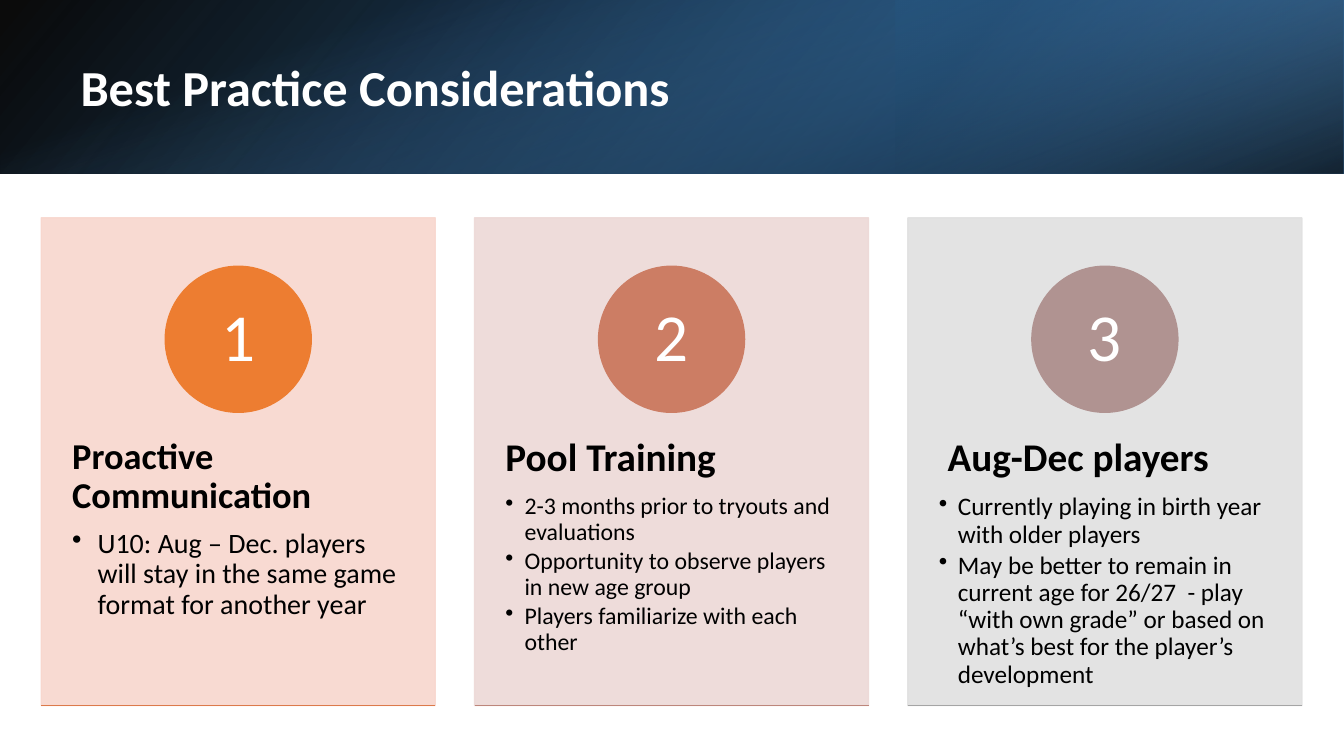
from pptx import Presentation
from pptx.dml.color import RGBColor
from pptx.enum.shapes import MSO_CONNECTOR as Connector, MSO_SHAPE as Shape
from pptx.enum.text import MSO_ANCHOR as Anchor, PP_ALIGN as Align
from pptx.oxml.ns import qn
from pptx.util import Cm, Pt
from lxml.etree import SubElement

WHITE = RGBColor(0xFF, 0xFF, 0xFF)
BLACK = RGBColor(0x00, 0x00, 0x00)
NAVY = RGBColor(0x1F, 0x4E, 0x79)
BLUE = RGBColor(0x2E, 0x75, 0xB6)
SKY = RGBColor(0x5B, 0x9B, 0xD5)
PEACH = RGBColor(0xF8, 0xD7, 0xCE)
ORANGE = RGBColor(0xED, 0x7D, 0x31)
RUST = RGBColor(0xDC, 0x7A, 0x4B)
ROSE = RGBColor(0xED, 0xD9, 0xD7)
CORAL = RGBColor(0xCC, 0x7D, 0x64)
CLAY = RGBColor(0xBD, 0x86, 0x7B)
SILVER = RGBColor(0xE1, 0xE1, 0xE1)
MAUVE = RGBColor(0xB0, 0x93, 0x91)
GRAY = RGBColor(0xA5, 0xA5, 0xA5)

FONT = "Calibri"
SLIDE_W, SLIDE_H = 33.87, 19.05
HEADER_H = 4.37
CARD_LEFT, CARD_TOP, CARD_W, CARD_H = 1.04, 5.49, 9.93, 12.29
CARD_PITCH = 10.92
CIRCLE_TOP, CIRCLE_SIZE = 6.71, 3.68
BODY_TOP, BODY_H = 10.13, 7.37

CARDS = [
    (PEACH, ORANGE, RUST, "Proactive Communication", 26, 20, 0.64, [
        "U10: Aug – Dec. players will stay in the same game format for another year",
    ]),
    (ROSE, CORAL, CLAY, "Pool Training", 28, 17, 0.48, [
        "2-3 months prior to tryouts and evaluations",
        "Opportunity to observe players in new age group",
        "Players familiarize with each other",
    ]),
    (SILVER, MAUVE, GRAY, " Aug-Dec players", 28, 18, 0.48, [
        "Currently playing in birth year with older players",
        "May be better to remain in current age for 26/27  - play “with own grade” "
        "or based on what’s best for the player’s development",
    ]),
]


def set_opacity(shape, opacities):
    colors = shape._element.spPr.iter(qn("a:srgbClr"))
    for color, opacity in zip(list(colors), opacities):
        SubElement(color, qn("a:alpha")).set("val", str(opacity * 1000))


def add_gradient(slide, box, angle, stops, rotation=0, flip=False):
    band = slide.shapes.add_shape(Shape.RECTANGLE, *map(Cm, box))
    band.shadow.inherit = False
    band.line.fill.background()
    band.rotation = rotation
    if flip:
        band._element.spPr.get_or_add_xfrm().set("flipH", "1")
    band.fill.gradient()
    band.fill.gradient_angle = 360 - angle
    for stop, (position, color, _) in zip(band.fill.gradient_stops, stops):
        stop.position = position
        stop.color.rgb = color
    set_opacity(band, [opacity for _, _, opacity in stops])


def add_solid(slide, kind, box, color):
    solid = slide.shapes.add_shape(kind, *map(Cm, box))
    solid.shadow.inherit = False
    solid.fill.solid()
    solid.fill.fore_color.rgb = color
    solid.line.color.rgb = color
    solid.line.width = Pt(1)
    return solid


def add_rule(slide, left, top, width, color):
    rule = slide.shapes.add_connector(
        Connector.STRAIGHT, Cm(left), Cm(top), Cm(left + width), Cm(top))
    rule.line.color.rgb = color
    rule.line.width = Pt(1)
    SubElement(rule._element.spPr, qn("a:effectLst"))


def add_text_frame(slide, box):
    frame = slide.shapes.add_textbox(*map(Cm, box)).text_frame
    frame.word_wrap = True
    return frame


def write(paragraph, text, size, color, bold=False):
    paragraph.text = text
    paragraph.font.name = FONT
    paragraph.font.size = Pt(size)
    paragraph.font.bold = bold
    paragraph.font.color.rgb = color


def write_bullet(paragraph, text, size, indent):
    paragraph.level = 1
    props = paragraph._p.get_or_add_pPr()
    props.set("marL", str(Cm(indent)))
    props.set("indent", str(-Cm(indent)))
    SubElement(props, qn("a:buChar")).set("char", "•")
    write(paragraph, text, size, BLACK)
    paragraph.line_spacing = 0.9
    paragraph.space_after = Pt(round(size * 0.15, 1))


def add_header(slide):
    add_gradient(slide, (0, 0, SLIDE_W, HEADER_H), 140,
                 [(0, BLACK, 96), (1, BLUE, 100)], flip=True)
    add_gradient(slide, (SLIDE_W * 2 / 3, 0, SLIDE_W / 3, HEADER_H), 320,
                 [(0.19, NAVY, 68), (1, SKY, 79)], rotation=180, flip=True)
    offset = (SLIDE_W - HEADER_H) / 2
    add_gradient(slide, (offset, -offset, HEADER_H, SLIDE_W), 340,
                 [(0.23, SKY, 0), (0.99, BLACK, 74)], rotation=90)
    title = add_text_frame(slide, (1.78, 1.3, 30.35, 1.8))
    write(title.paragraphs[0], "Best Practice Considerations", 36, WHITE, bold=True)


def add_number(slide, left, number, color):
    circle_left = left + (CARD_W - CIRCLE_SIZE) / 2
    circle = add_solid(slide, Shape.OVAL,
                       (circle_left, CIRCLE_TOP, CIRCLE_SIZE, CIRCLE_SIZE), color)
    frame = circle.text_frame
    frame.vertical_anchor = Anchor.MIDDLE
    label = frame.paragraphs[0]
    write(label, str(number), 48, WHITE)
    label.alignment = Align.CENTER
    label.line_spacing = 0.9


def add_card(slide, index, card):
    tint, accent, edge, heading, heading_size, bullet_size, indent, bullets = card
    left = CARD_LEFT + index * CARD_PITCH
    panel = add_solid(slide, Shape.RECTANGLE, (left, CARD_TOP, CARD_W, CARD_H), tint)
    set_opacity(panel, [90, 90])
    body = add_text_frame(slide, (left, BODY_TOP, CARD_W, BODY_H))
    body.margin_left = body.margin_right = Cm(0.78)
    body.margin_top = body.margin_bottom = Cm(0.91)
    title = body.paragraphs[0]
    write(title, heading, heading_size, BLACK, bold=True)
    title.line_spacing = 0.9
    title.space_after = Pt(round(heading_size * 0.35, 1))
    for bullet in bullets:
        write_bullet(body.add_paragraph(), bullet, bullet_size, indent)
    add_number(slide, left, index + 1, accent)
    add_rule(slide, left, CARD_TOP + CARD_H, CARD_W, edge)


def main():
    deck = Presentation()
    deck.slide_width, deck.slide_height = Cm(SLIDE_W), Cm(SLIDE_H)
    slide = deck.slides.add_slide(deck.slide_layouts[6])
    add_header(slide)
    for index, card in enumerate(CARDS):
        add_card(slide, index, card)
    deck.save("out.pptx")


if __name__ == "__main__":
    main()
